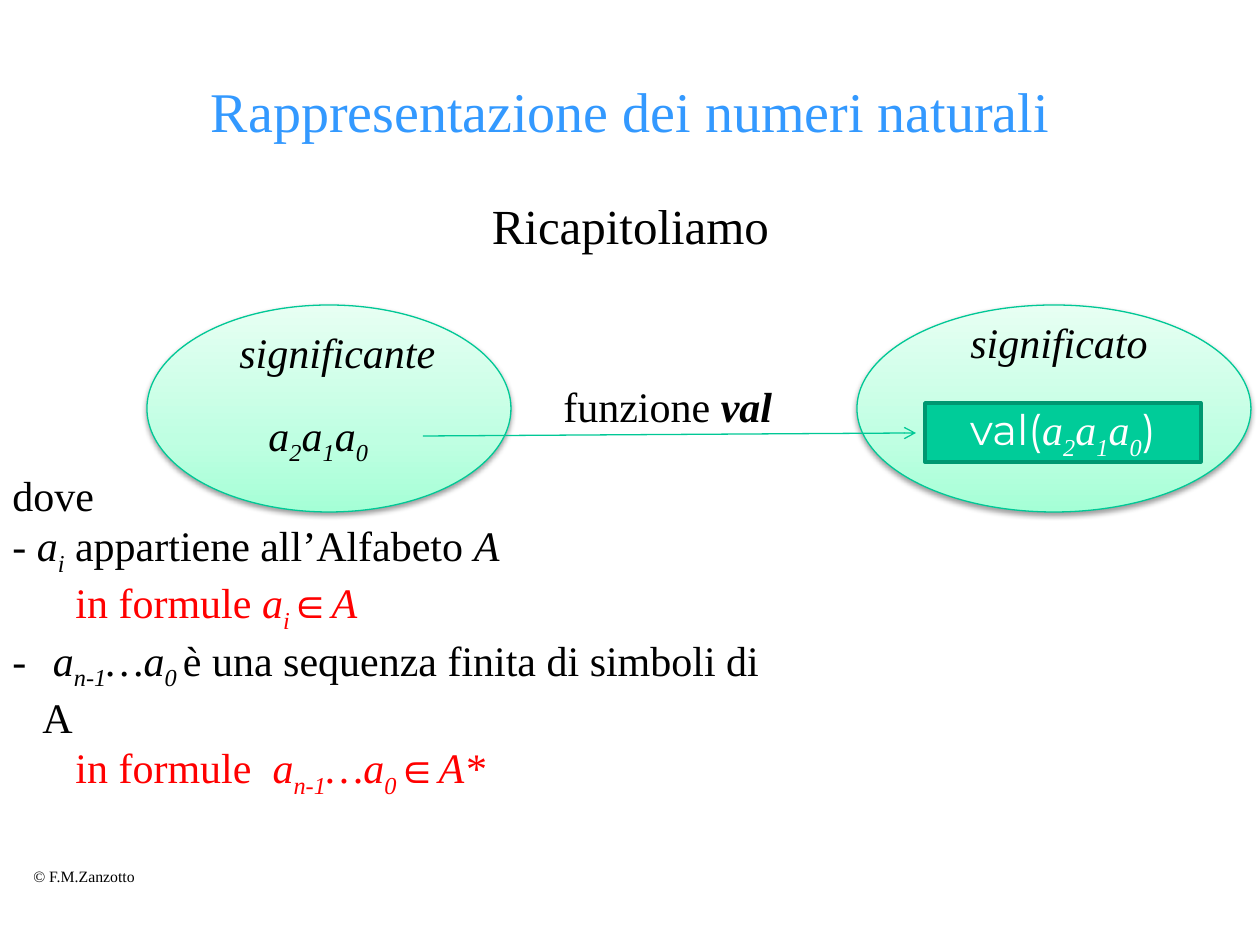
from copy import deepcopy

from pptx import Presentation
from pptx.dml.color import RGBColor
from pptx.enum.shapes import MSO_CONNECTOR, MSO_SHAPE
from pptx.enum.text import MSO_ANCHOR, PP_ALIGN
from pptx.oxml.ns import qn
from pptx.util import Pt
from lxml import etree

PX = 914400 // 126
LEFT, CENTER = PP_ALIGN.LEFT, PP_ALIGN.CENTER
TOP, MIDDLE = MSO_ANCHOR.TOP, MSO_ANCHOR.MIDDLE
SERIF, SANS = "Times New Roman", "Montserrat"
COLORS = {name: RGBColor.from_string(code) for name, code in {
    "black": "000000", "white": "FFFFFF", "title": "3399FF", "red": "FF0000",
    "outline": "00C896", "box": "00CC99", "box_edge": "009771",
    "mint_low": "A5FFD6", "mint_mid": "BFFFE2", "mint_high": "E7FFF3",
}.items()}


def write(paragraph, runs, size=24, color="black", align=LEFT):
    """Add (text, flags) runs: i italic, b bold, _ subscript, r red, s sans."""
    paragraph.alignment = align
    for text, flags in runs:
        run = paragraph.add_run()
        run.text = text
        font = run.font
        font.size = Pt(size)
        font.name = SANS if "s" in flags else SERIF
        font.italic = "i" in flags
        font.bold = "b" in flags
        font.color.rgb = COLORS["red" if "r" in flags else color]
        if "_" in flags:
            font._element.set("baseline", "-25000")


def add_text(box, paragraphs, wrap=True, anchor=TOP, **style):
    left, top, width, height = (n * PX for n in box)
    frame = slide.shapes.add_textbox(left, top, width, height).text_frame
    frame.word_wrap = wrap
    frame.vertical_anchor = anchor
    for i, runs in enumerate(paragraphs):
        write(frame.add_paragraph() if i else frame.paragraphs[0], runs, **style)
    return frame


prs = Presentation()
prs.slide_width, prs.slide_height = 1260 * PX, 945 * PX
slide = prs.slides.add_slide(prs.slide_layouts[6])

add_text((21, 861, 129, 31), [[("© F.M.Zanzotto", "")]], wrap=False, size=9)

# The two sets
mint_stops = [(0, "mint_low"), (0.35, "mint_mid"), (1, "mint_high")]
for left, width in [(857, 394), (147, 364)]:
    oval = slide.shapes.add_shape(MSO_SHAPE.OVAL, left * PX, 305 * PX, width * PX, 207 * PX)
    oval.line.color.rgb = COLORS["outline"]
    oval.line.width = Pt(0.75)
    oval.fill.gradient()
    oval.fill.gradient_angle = 90
    stop_list = oval._element.spPr.find(".//" + qn("a:gsLst"))
    stop_list.append(deepcopy(stop_list[0]))
    for stop, (position, color) in zip(oval.fill.gradient_stops, mint_stops):
        stop.position = position
        stop.color.rgb = COLORS[color]
    oval.shadow.inherit = False
    effects = oval._element.spPr.find(qn("a:effectLst"))
    shadow = etree.SubElement(effects, qn("a:outerShdw"), blurRad=str(Pt(3.1)),
                              dist=str(Pt(1.6)), dir="5400000", rotWithShape="0")
    shade = etree.SubElement(shadow, qn("a:srgbClr"), val=str(COLORS["black"]))
    etree.SubElement(shade, qn("a:alpha"), val="38000")

add_text((95, 63, 1071, 95), [[("Rappresentazione dei numeri naturali", "")]],
         anchor=MIDDLE, size=32, color="title", align=CENTER)
add_text((95, 189, 1071, 651), [[("Ricapitoliamo", "")]], size=28, align=CENTER)

# Numeral, function arrow and value
numeral = [(text, flags) for digit in "210" for text, flags in (("a", "i"), (digit, "i_"))]
add_text((256, 403, 168, 63), [numeral])

arrow = slide.shapes.add_connector(MSO_CONNECTOR.STRAIGHT, 423 * PX, 436 * PX, 916 * PX, 433 * PX)
arrow.line.color.rgb = COLORS["outline"]
arrow.line.width = Pt(0.75)
etree.SubElement(arrow.line._get_or_add_ln(), qn("a:tailEnd"), type="arrow")
etree.SubElement(arrow._element.spPr, qn("a:effectLst"))

add_text((227, 320, 223, 63), [[("significante", "i")]], wrap=False)
add_text((958, 310, 204, 63), [[("significato", "i")]], wrap=False)

value = slide.shapes.add_shape(MSO_SHAPE.RECTANGLE, 925 * PX, 403 * PX, 276 * PX, 59 * PX)
value.shadow.inherit = False
value.fill.solid()
value.fill.fore_color.rgb = COLORS["box"]
value.line.color.rgb = COLORS["box_edge"]
value.line.width = Pt(2)
value.text_frame.vertical_anchor = MIDDLE
write(value.text_frame.paragraphs[0], [("val(", "s"), *numeral, (")", "s")],
      color="white", align=CENTER)

add_text((551, 374, 236, 63), [[("funzione ", ""), ("val", "bi")]], wrap=False)

# Conditions
conditions = add_text((0, 463, 805, 318), [
    [("dove", "")],
    [("- a", "i"), ("i", "i_"), (" appartiene all’Alfabeto ", ""), ("A", "i")],
    [("\t", ""), ("in formule ", "r"), ("a", "ir"), ("i", "ir_"), ("∈A", "ir")],
    [(" a", "i"), ("n-1", "i_"), ("…a", "i"), ("0 ", "i_"),
     ("è una sequenza finita di simboli di A", "")],
    [("\t", ""), ("in formule  ", "r"), ("a", "ir"), ("n-1", "ir_"), ("…a", "ir"),
     ("0", "ir_"), ("∈A*", "ir")],
])
dash_item = conditions.paragraphs[3]._p.get_or_add_pPr()
dash_item.set("marL", str(30 * PX))
dash_item.set("indent", str(-30 * PX))
etree.SubElement(dash_item, qn("a:buFont"), typeface=SERIF)
etree.SubElement(dash_item, qn("a:buChar"), char="-")

prs.save("out.pptx")
